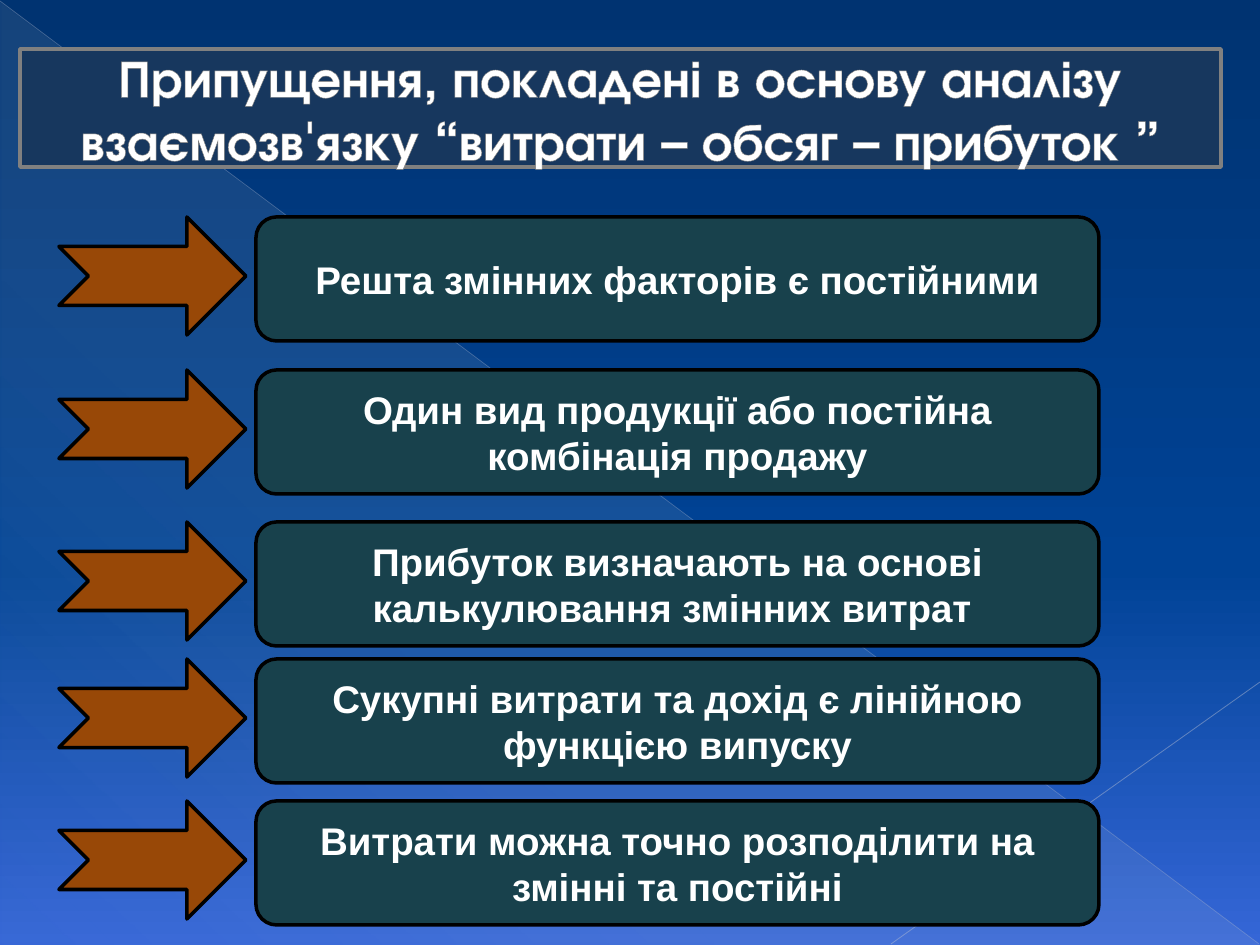
from dataclasses import dataclass

from lxml import etree
from pptx import Presentation
from pptx.dml.color import RGBColor
from pptx.enum.shapes import MSO_CONNECTOR, MSO_SHAPE
from pptx.enum.text import MSO_ANCHOR, MSO_AUTO_SIZE, PP_ALIGN
from pptx.oxml import parse_xml
from pptx.oxml.ns import nsdecls, qn
from pptx.util import Emu, Pt

ARROW = MSO_SHAPE.NOTCHED_RIGHT_ARROW
ROUND = MSO_SHAPE.ROUNDED_RECTANGLE
WEDGE = MSO_SHAPE.RIGHT_TRIANGLE
STRAIGHT = MSO_CONNECTOR.STRAIGHT
MIDDLE = MSO_ANCHOR.MIDDLE
CENTER = PP_ALIGN.CENTER
NO_FIT = MSO_AUTO_SIZE.NONE
SCALE = 914400 / 126


@dataclass(frozen=True)
class Theme:
    sky: tuple = ((0, "003371", 100), (60, "004396", 100), (100, "3566D7", 100))
    haze: tuple = ((0, "EEECE1", 10), (70, "EEECE1", 8), (100, "EEECE1", 1))
    panel: str = "17375E"
    frame: str = "808080"
    arrow: str = "984807"
    card: str = "18414C"
    edge: str = "000000"
    text: str = "FFFFFF"
    glow: str = "7D7D7D"
    head_font: str = "TeX Gyre Adventor"
    body_font: str = "Arial"
    head_size: int = 30
    body_size: int = 22


@dataclass(frozen=True)
class Box:
    x: int
    y: int
    w: int
    h: int


@dataclass(frozen=True)
class Ray:
    x1: int
    y1: int
    x2: int
    y2: int
    color: str
    width: float
    alpha: int


@dataclass(frozen=True)
class Item:
    y: int
    text: str


THEME = Theme()
HEAD = "Припущення, покладені в основу аналізу взаємозв'язку “витрати – обсяг – прибуток ”"
ITEMS = (
    Item(217, "Решта змінних факторів є постійними"),
    Item(370, "Один вид продукції або постійна комбінація продажу"),
    Item(522, "Прибуток визначають на основі калькулювання змінних витрат "),
    Item(659, "Сукупні витрати та дохід є лінійною функцією випуску"),
    Item(801, "Витрати можна точно розподілити на змінні та постійні"),
)
RAYS = (
    Ray(0, 1, 1259, 944, "ADB6CE", 0.39, 35),
    Ray(1260, 682, 891, 944, "B6BED3", 0.47, 45),
)


def px(n: int) -> Emu:
    return Emu(round(n * SCALE))


def rgb(code: str) -> RGBColor:
    return RGBColor.from_string(code)


def blend(props, stops: tuple, angle: int) -> None:
    """Swap the solid fill in props for a gradient of (place, colour, opacity)."""
    marks = "".join(
        f'<a:gs pos="{at * 1000}"><a:srgbClr val="{code}">'
        f'<a:alpha val="{alpha * 1000}"/></a:srgbClr></a:gs>'
        for at, code, alpha in stops
    )
    grad = parse_xml(
        f'<a:gradFill {nsdecls("a")} rotWithShape="1"><a:gsLst>{marks}</a:gsLst>'
        f'<a:lin ang="{angle * 60000}" scaled="0"/></a:gradFill>'
    )
    props.replace(props.find(qn("a:solidFill")), grad)


def place(shape, box: Box) -> None:
    spots = {"left": box.x, "top": box.y, "width": box.w, "height": box.h}
    for name, value in spots.items():
        setattr(shape, name, px(value))


def paint(shape, fill: str, line: str) -> None:
    shape.fill.solid()
    shape.fill.fore_color.rgb = rgb(fill)
    shape.line.color.rgb = rgb(line)
    shape.line.width = Pt(2)


def add_box(slide, kind, box: Box, fill: str):
    shape = slide.shapes.add_shape(kind, 0, 0, 0, 0)
    place(shape, box)
    paint(shape, fill, THEME.edge)
    shape.shadow.inherit = False
    return shape


def write(shape, text: str, face: str, size: int):
    frame = shape.text_frame
    form = {"word_wrap": True, "auto_size": NO_FIT, "vertical_anchor": MIDDLE}
    for name, value in form.items():
        setattr(frame, name, value)
    para = frame.paragraphs[0]
    para.alignment = CENTER
    run = para.add_run()
    run.text = text
    for name, value in {"name": face, "size": Pt(size), "bold": True}.items():
        setattr(run.font, name, value)
    run.font.color.rgb = rgb(THEME.text)
    return run


def add_ray(slide, ray: Ray) -> None:
    ends = map(px, (ray.x1, ray.y1, ray.x2, ray.y2))
    line = slide.shapes.add_connector(STRAIGHT, *ends)
    line.line.color.rgb = rgb(ray.color)
    line.line.width = Pt(ray.width)
    props = line._element.spPr
    tint = next(props.iter(qn("a:srgbClr")))
    etree.SubElement(tint, qn("a:alpha"), val=str(ray.alpha * 1000))
    etree.SubElement(props, qn("a:effectLst"))


def add_back(slide) -> None:
    slide.background.fill.solid()
    blend(next(slide._element.iter(qn("p:bgPr"))), THEME.sky, 90)
    wedge = add_box(slide, WEDGE, Box(1, 2, 1259, 943), THEME.panel)
    wedge.line.fill.background()
    blend(wedge._element.spPr, THEME.haze, 133)
    for ray in RAYS:
        add_ray(slide, ray)


def add_head(slide) -> None:
    title = slide.shapes.title
    slide.shapes._spTree.append(title._element)  # in front of the backdrop
    place(title, Box(20, 49, 1201, 118))
    paint(title, THEME.panel, THEME.frame)
    run = write(title, HEAD, THEME.head_font, THEME.head_size)
    rim = parse_xml(
        f'<a:ln {nsdecls("a")} w="{Pt(0.83)}"><a:solidFill>'
        f'<a:srgbClr val="{THEME.glow}"/></a:solidFill></a:ln>'
    )
    run._r.get_or_add_rPr().insert(0, rim)


def add_item(slide, item: Item) -> None:
    add_box(slide, ARROW, Box(59, item.y, 187, 118), THEME.arrow)
    card = add_box(slide, ROUND, Box(256, item.y, 843, 124), THEME.card)
    write(card, item.text, THEME.body_font, THEME.body_size)


def main() -> None:
    deck = Presentation()
    deck.slide_width, deck.slide_height = px(1260), px(945)
    slide = deck.slides.add_slide(deck.slide_layouts[5])
    add_back(slide)
    add_head(slide)
    for item in ITEMS:
        add_item(slide, item)
    deck.save("out.pptx")


if __name__ == "__main__":
    main()
